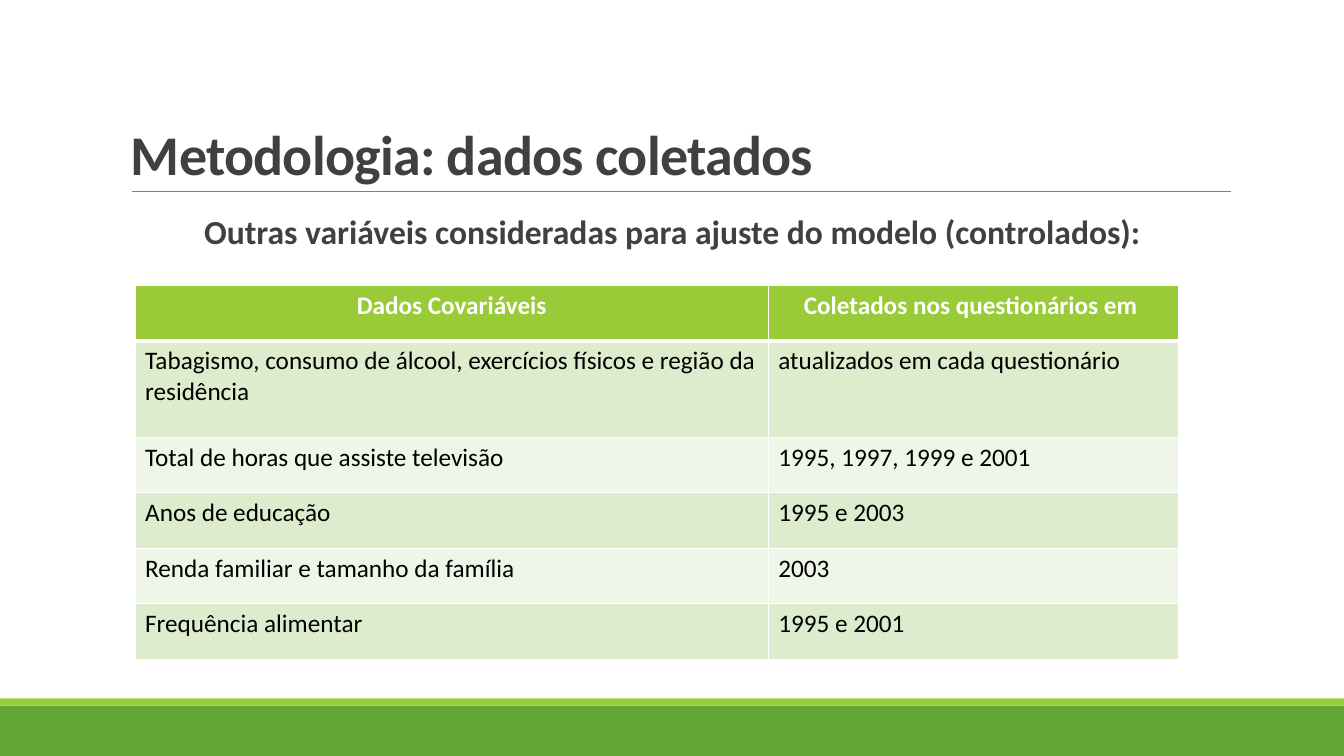
from dataclasses import dataclass

from lxml.etree import SubElement
from pptx import Presentation
from pptx.dml.color import RGBColor
from pptx.enum.shapes import MSO_CONNECTOR, MSO_SHAPE
from pptx.enum.text import MSO_ANCHOR, PP_ALIGN
from pptx.oxml.ns import qn
from pptx.slide import Slide
from pptx.table import _Cell
from pptx.text.text import TextFrame
from pptx.util import Emu, Pt

PX_PER_INCH = 100


@dataclass(frozen=True)
class Theme:
    font: str = "Calibri"
    white: str = "FFFFFF"
    text: str = "404040"
    black: str = "000000"
    rule: str = "808080"
    green: str = "63A537"
    lime: str = "99CB38"
    bands: tuple[str, str] = ("DEECCE", "EFF6E8")
    title_size: int = 40
    subtitle_size: int = 24
    table_size: int = 18


@dataclass(frozen=True)
class Box:
    left: int
    top: int
    width: int
    height: int

    def emu(self) -> tuple[Emu, Emu, Emu, Emu]:
        return px(self.left), px(self.top), px(self.width), px(self.height)


@dataclass(frozen=True)
class Bar:
    box: Box
    color: str


@dataclass(frozen=True)
class Covariate:
    data: str
    collected: str


THEME = Theme()
FOOTER_BARS = (
    Bar(Box(0, 700, 1333, 50), THEME.green),
    Bar(Box(0, 693, 1333, 7), THEME.lime),
)
HEADER = Covariate("Dados Covariáveis", "Coletados nos questionários em ")
COVARIATES = (
    Covariate("Tabagismo, consumo de álcool, exercícios físicos e região da residência",
              "atualizados em cada questionário"),
    Covariate("Total de horas que assiste televisão", "1995, 1997, 1999 e 2001"),
    Covariate("Anos de educação", "1995 e 2003"),
    Covariate("Renda familiar e tamanho da família", "2003"),
    Covariate("Frequência alimentar", "1995 e 2001"),
)
TABLE_BOX = Box(134, 283, 1035, 371)
COLUMN_WIDTHS = (628, 407)
ROW_HEIGHT, TALL_ROW_HEIGHT = 55, 96


def px(value: int) -> Emu:
    return Emu(value * 914400 // PX_PER_INCH)


def rgb(color: str) -> RGBColor:
    return RGBColor.from_string(color)


def write(tf: TextFrame, text: str, *, size: int, color: str, bold: bool = False,
          align: PP_ALIGN = PP_ALIGN.LEFT, line_spacing: float = 1.0,
          before: int = 0, after: int = 0, tracking: float = 0) -> None:
    p = tf.paragraphs[0]
    p.alignment = align
    p.line_spacing = line_spacing
    p.space_before, p.space_after = Pt(before), Pt(after)
    r = p.add_run()
    r.text = text
    r.font.name = THEME.font
    r.font.size = Pt(size)
    r.font.bold = bold
    r.font.color.rgb = rgb(color)
    if tracking:
        r._r.get_or_add_rPr().set("spc", str(round(tracking * 100)))


def add_text_frame(s: Slide, box: Box, anchor: MSO_ANCHOR) -> TextFrame:
    tf = s.shapes.add_textbox(*box.emu()).text_frame
    tf.word_wrap = True
    tf.vertical_anchor = anchor
    return tf


def add_bar(s: Slide, bar: Bar) -> None:
    sp = s.shapes.add_shape(MSO_SHAPE.RECTANGLE, *bar.box.emu())
    sp.shadow.inherit = False
    sp.fill.solid()
    sp.fill.fore_color.rgb = rgb(bar.color)
    sp.line.fill.background()


def add_title_rule(s: Slide) -> None:
    line = s.shapes.add_connector(MSO_CONNECTOR.STRAIGHT, px(131), px(190), px(1221), px(190))
    line.line.color.rgb = rgb(THEME.rule)
    line.line.width = Pt(0.5)
    SubElement(line._element.spPr, qn("a:effectLst"))


def style_cell(cell: _Cell, fill: str, top: int, bottom: int) -> None:
    """Set white borders, whose widths are in points, and then the fill."""
    tc_pr = cell._tc.get_or_add_tcPr()
    for side, width in (("L", 1), ("R", 1), ("T", top), ("B", bottom)):
        ln = SubElement(tc_pr, qn(f"a:ln{side}"), w=str(Pt(width)))
        solid = SubElement(ln, qn("a:solidFill"))
        SubElement(solid, qn("a:srgbClr"), val=THEME.white)
    cell.fill.solid()
    cell.fill.fore_color.rgb = rgb(fill)


def add_covariate_table(s: Slide) -> None:
    rows = (HEADER, *COVARIATES)
    table = s.shapes.add_table(len(rows), len(COLUMN_WIDTHS), *TABLE_BOX.emu()).table
    for column, width in zip(table.columns, COLUMN_WIDTHS):
        column.width = px(width)
    for i, row in enumerate(rows):
        is_header = i == 0
        table.rows[i].height = px(TALL_ROW_HEIGHT if i == 1 else ROW_HEIGHT)
        fill = THEME.lime if is_header else THEME.bands[(i - 1) % 2]
        for j, text in enumerate((row.data, row.collected)):
            cell = table.cell(i, j)
            style_cell(cell, fill, top=3 if i == 1 else 1, bottom=3 if is_header else 1)
            write(cell.text_frame, text, size=THEME.table_size, bold=is_header,
                  color=THEME.white if is_header else THEME.black,
                  align=PP_ALIGN.CENTER if is_header else PP_ALIGN.LEFT)


def main() -> None:
    prs = Presentation()
    prs.slide_width, prs.slide_height = px(1333), px(750)
    s = prs.slides.add_slide(prs.slide_layouts[6])
    for bar in FOOTER_BARS:
        add_bar(s, bar)
    add_title_rule(s)
    title = add_text_frame(s, Box(120, 31, 1100, 159), MSO_ANCHOR.BOTTOM)
    write(title, "Metodologia: dados coletados", size=THEME.title_size, color=THEME.text,
          bold=True, line_spacing=0.85, tracking=-0.5)
    subtitle = add_text_frame(s, Box(117, 209, 1100, 452), MSO_ANCHOR.TOP)
    subtitle.margin_left = subtitle.margin_right = 0
    write(subtitle, "Outras variáveis consideradas para ajuste do modelo (controlados):",
          size=THEME.subtitle_size, color=THEME.text, bold=True, align=PP_ALIGN.CENTER,
          line_spacing=0.9, before=12, after=2)
    add_covariate_table(s)
    prs.save("out.pptx")


if __name__ == "__main__":
    main()
